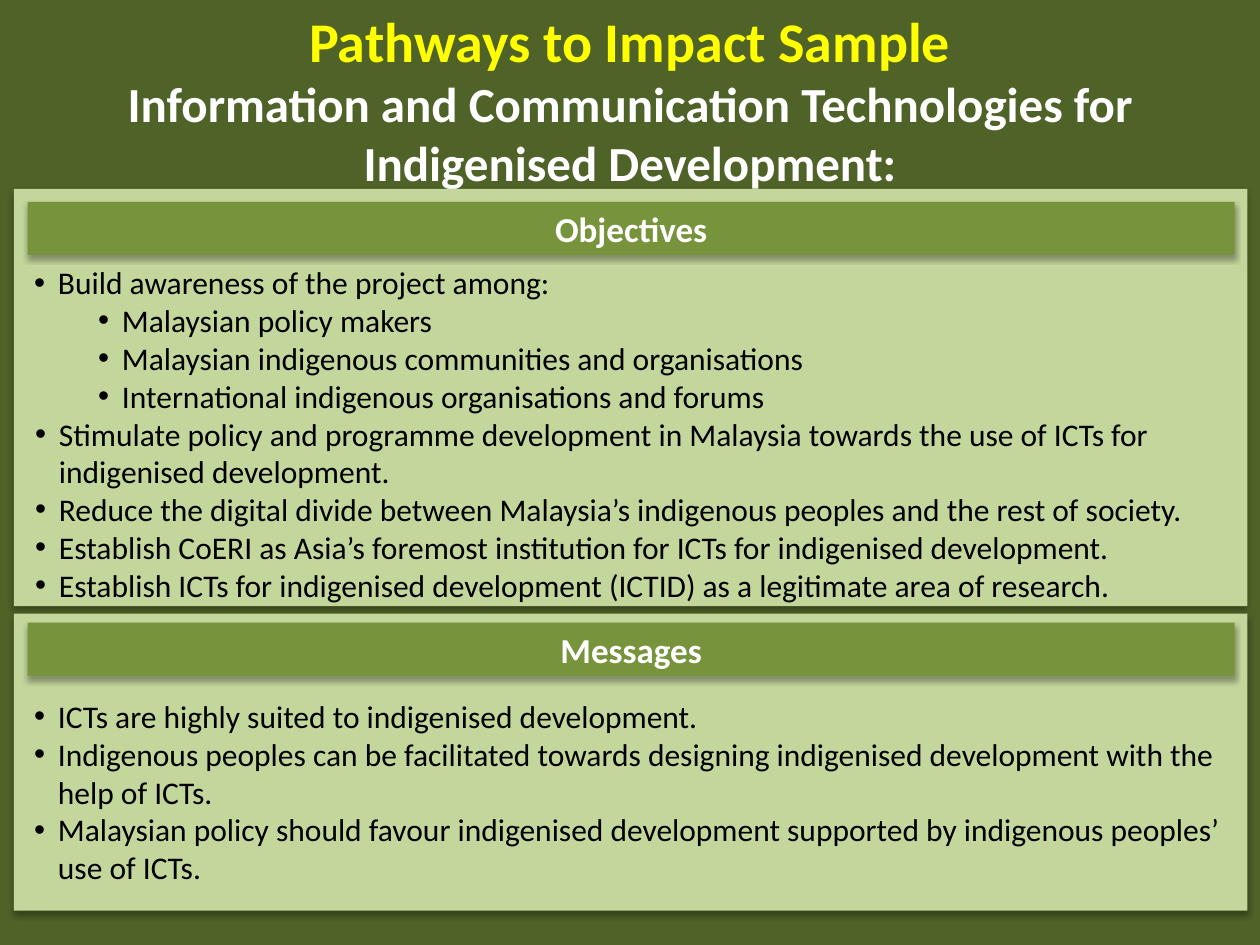
from dataclasses import dataclass

from lxml.etree import SubElement
from pptx import Presentation
from pptx.dml.color import RGBColor
from pptx.enum.shapes import MSO_SHAPE
from pptx.enum.text import MSO_ANCHOR, PP_ALIGN
from pptx.oxml.ns import qn
from pptx.util import Cm, Pt


@dataclass(frozen=True)
class Theme:
    font: str = "Calibri"
    background: str = "4F6228"
    panel: str = "C3D69B"
    header: str = "77933C"
    highlight: str = "FFFF00"
    light: str = "FFFFFF"
    dark: str = "000000"
    title_size: int = 32
    subtitle_size: int = 28
    header_size: int = 20
    body_size: int = 18


THEME = Theme()

# Each bullet: (indent level, left margin in cm, text)
OBJECTIVES = [
    (0, 0.64, "Build awareness of the project among:"),
    (1, 1.93, "Malaysian policy makers"),
    (1, 1.93, "Malaysian indigenous communities and organisations"),
    (1, 1.93, "International indigenous organisations and forums"),
    (0, 0.66, "Stimulate policy and programme development in Malaysia towards "
              "the use of ICTs for indigenised development."),
    (0, 0.66, "Reduce the digital divide between Malaysia’s indigenous peoples "
              "and the rest of society."),
    (0, 0.66, "Establish CoERI as Asia’s foremost institution for ICTs for "
              "indigenised development."),
    (0, 0.66, "Establish ICTs for indigenised development (ICTID) as a "
              "legitimate area of research."),
]
MESSAGES = [
    (0, 0.64, "ICTs are highly suited to indigenised development."),
    (0, 0.64, "Indigenous peoples can be facilitated towards designing "
              "indigenised development with the help of ICTs."),
    (0, 0.64, "Malaysian policy should favour indigenised development supported "
              "by indigenous peoples’ use of ICTs."),
]


def add_run(paragraph, text, size, color, bold=False):
    run = paragraph.add_run()
    run.text = text
    run.font.name = THEME.font
    run.font.size = Pt(size)
    run.font.bold = bold
    run.font.color.rgb = RGBColor.from_string(color)


def add_soft_shadow(shape):
    shape.shadow.inherit = False
    effects = shape._element.spPr.find(qn("a:effectLst"))
    shadow = SubElement(effects, qn("a:outerShdw"), blurRad=str(Pt(3.5)),
                        dist=str(Pt(2.2)), dir="5400000", rotWithShape="0")
    color = SubElement(shadow, qn("a:srgbClr"), val=THEME.dark)
    SubElement(color, qn("a:alpha"), val="32000")


def add_block(slide, left, top, width, height, color):
    block = slide.shapes.add_shape(MSO_SHAPE.RECTANGLE, Cm(left), Cm(top),
                                   Cm(width), Cm(height))
    block.fill.solid()
    block.fill.fore_color.rgb = RGBColor.from_string(color)
    block.line.fill.background()
    add_soft_shadow(block)
    block.text_frame.word_wrap = True
    return block


def add_bullet(paragraph, level, margin, text):
    paragraph.level = level
    paragraph.alignment = PP_ALIGN.LEFT
    properties = paragraph._p.get_or_add_pPr()
    properties.set("marL", str(Cm(margin)))
    properties.set("indent", str(Cm(-0.48)))
    SubElement(properties, qn("a:buFont"), typeface="Arial")
    SubElement(properties, qn("a:buChar"), char="•")
    add_run(paragraph, text, THEME.body_size, THEME.dark)


def add_title(slide):
    title = slide.shapes.add_textbox(Cm(1.27), Cm(0.41), Cm(22.86), Cm(3.18))
    frame = title.text_frame
    frame.word_wrap = True
    frame.vertical_anchor = MSO_ANCHOR.MIDDLE
    paragraph = frame.paragraphs[0]
    paragraph.alignment = PP_ALIGN.CENTER
    add_run(paragraph, "Pathways to Impact Sample",
            THEME.title_size, THEME.highlight, bold=True)
    paragraph.add_line_break()
    add_run(paragraph, "Information and Communication Technologies for "
            "Indigenised Development:",
            THEME.subtitle_size, THEME.light, bold=True)


def add_section(slide, heading, bullets, top, height, header_top, text_inset):
    # Panel with its bullets below the header
    panel = add_block(slide, 0.28, top, 24.87, height, THEME.panel)
    frame = panel.text_frame
    frame.vertical_anchor = MSO_ANCHOR.TOP
    frame.margin_top = Cm(text_inset)
    frame.margin_bottom = 0
    for index, bullet in enumerate(bullets):
        paragraph = frame.add_paragraph() if index else frame.paragraphs[0]
        add_bullet(paragraph, *bullet)

    # Header bar
    header = add_block(slide, 0.56, header_top, 24.33, 1.07, THEME.header)
    header.text_frame.vertical_anchor = MSO_ANCHOR.MIDDLE
    paragraph = header.text_frame.paragraphs[0]
    paragraph.alignment = PP_ALIGN.CENTER
    add_run(paragraph, heading, THEME.header_size, THEME.light, bold=True)


def main():
    deck = Presentation()
    deck.slide_width, deck.slide_height = Cm(25.4), Cm(19.05)
    slide = deck.slides.add_slide(deck.slide_layouts[6])
    slide.background.fill.solid()
    slide.background.fill.fore_color.rgb = RGBColor.from_string(THEME.background)

    add_title(slide)
    add_section(slide, "Objectives", OBJECTIVES, top=3.81, height=8.41,
                header_top=4.07, text_inset=1.5)
    add_section(slide, "Messages", MESSAGES, top=12.37, height=5.99,
                header_top=12.55, text_inset=1.68)
    deck.save("out.pptx")


if __name__ == "__main__":
    main()
